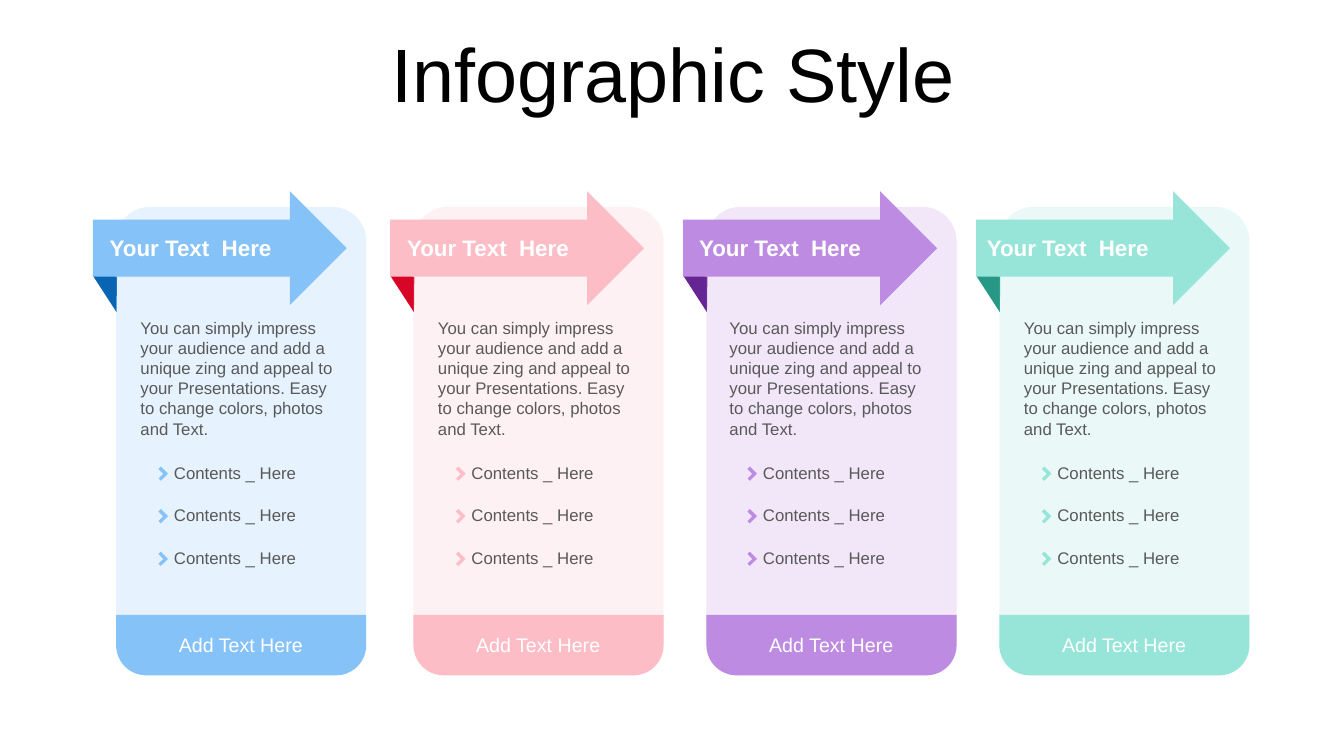
from lxml.etree import SubElement
from pptx import Presentation
from pptx.dml.color import RGBColor
from pptx.enum.shapes import MSO_SHAPE
from pptx.enum.text import MSO_ANCHOR, MSO_AUTO_SIZE, PP_ALIGN
from pptx.oxml.ns import qn
from pptx.util import Pt


def tint(fill, code, alpha=None):
    fill.solid()
    fill.fore_color.rgb = RGBColor.from_string(code)
    if alpha is not None:
        node = fill._xPr.find(qn("a:solidFill"))[0]
        SubElement(node, qn("a:alpha"), val=str(alpha * 1000))


class Board:
    font = "Arial"
    gray = "595959"
    white = "FFFFFF"

    def __init__(self, slide):
        self.shapes = slide.shapes

    def text(self, words, left, top, width, height, size=12, color=gray,
             bold=False, align=PP_ALIGN.LEFT, anchor=MSO_ANCHOR.TOP, line=1, before=0):
        frame = self.shapes.add_textbox(Pt(left), Pt(top), Pt(width), Pt(height)).text_frame
        frame.word_wrap = True
        frame.auto_size = MSO_AUTO_SIZE.SHAPE_TO_FIT_TEXT
        frame.vertical_anchor = anchor
        para = frame.paragraphs[0]
        para.alignment = align
        para.line_spacing = line
        para.space_before = Pt(before)
        run = para.add_run()
        run.text = words
        run.font.name = self.font
        run.font.size = Pt(size)
        run.font.bold = bold
        tint(run.font.fill, color)

    def paint(self, shape, color, alpha=None):
        shape.shadow.inherit = False
        shape.line.fill.background()
        tint(shape.fill, color, alpha)

    def shape(self, kind, left, top, width, height, color, alpha=None, turn=0, adjust=()):
        item = self.shapes.add_shape(kind, Pt(left), Pt(top), Pt(width), Pt(height))
        item.rotation = turn
        for index, value in enumerate(adjust):
            item.adjustments[index] = value
        self.paint(item, color, alpha)

    def fold(self, left, top, color):
        form = self.shapes.build_freeform(Pt(left), Pt(top))
        form.add_line_segments([
            (Pt(left + 17.3), Pt(top + 0.6)),
            (Pt(left + 17), Pt(top + 26.2)),
        ])
        self.paint(form.convert_to_shape(), color)

    def card(self, left, head, body, color, dark):
        base = left + 16.6
        self.fold(left, 196.8, dark)
        self.shape(MSO_SHAPE.ROUNDED_RECTANGLE, base, 147.8, 178.7, 334.5, color,
                   alpha=20, adjust=[0.136])
        self.shape(MSO_SHAPE.ROUND_2_SAME_RECTANGLE, base, 439.2, 178.7, 43.2, color,
                   turn=180, adjust=[0.5, 0])
        self.shape(MSO_SHAPE.RIGHT_ARROW, left, 136.6, 181.4, 81.4, color)
        self.text("Your Text  Here", head, 164, 152.6, 26.6, size=16,
                  color=self.white, bold=True)
        self.text("You can simply impress your audience and add a unique zing and "
                  "appeal to your Presentations. Easy to change colors, photos and Text.",
                  body, 223.2, 154.1, 94.3)
        self.text("Add Text Here", base + 34.8, 448.6, 108.7, 24.5, size=14,
                  color=self.white, align=PP_ALIGN.CENTER)
        for row in range(3):
            drop = row * 30.4
            self.shape(MSO_SHAPE.CORNER, body + 18, 334.7 + drop, 7.2, 7.2, color,
                       turn=225, adjust=[0.344, 0.318])
            self.text("Contents _ Here", body + 23.9, 326.9 + drop, 117.4, 21.6)


def main():
    deck = Presentation()
    deck.slide_width, deck.slide_height = Pt(960), Pt(540)
    board = Board(deck.slides.add_slide(deck.slide_layouts[6]))
    board.text("Infographic Style", 25.2, 22.3, 911.5, 66.2, size=54, color="000000",
               align=PP_ALIGN.CENTER, anchor=MSO_ANCHOR.MIDDLE, line=0.9, before=10)
    cards = [
        (66.3, 71.3, 93.3, "85C2F8", "0A64B4"),
        (278.7, 283.7, 305.8, "FDBDC7", "D70627"),
        (488, 492.3, 514, "BE8BE2", "652592"),
        (697.2, 697.8, 724.3, "96E5D8", "269885"),
    ]
    for card in cards:
        board.card(*card)
    deck.save("out.pptx")


if __name__ == "__main__":
    main()
